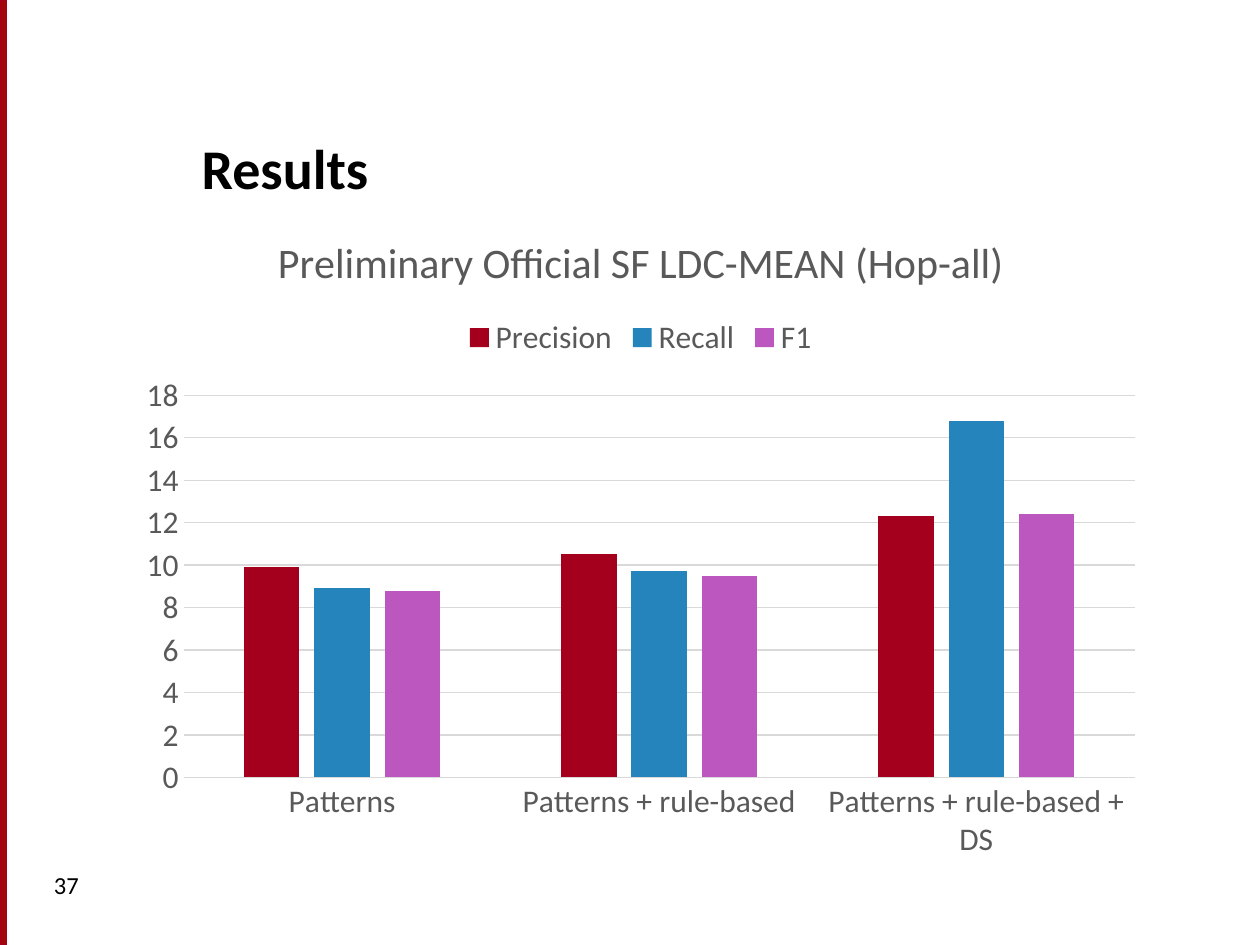
import pptx
import pptx.util
import pptx.chart.data
import pptx.dml.color
import pptx.enum.chart
import pptx.enum.shapes
import pptx.enum.text

Inches = pptx.util.Inches
Pt = pptx.util.Pt
RGBColor = pptx.dml.color.RGBColor

BLACK = RGBColor(0x00, 0x00, 0x00)
WHITE = RGBColor(0xFF, 0xFF, 0xFF)
GRAY = RGBColor(0x59, 0x59, 0x59)
RULE = RGBColor(0xD9, 0xD9, 0xD9)
EDGE = RGBColor(0xA4, 0x05, 0x08)
RED = RGBColor(0xA4, 0x00, 0x1D)
BLUE = RGBColor(0x25, 0x84, 0xBB)
PINK = RGBColor(0xBB, 0x57, 0xBE)


def style(font, size, color, bold=False):
    font.name = "Calibri"
    font.size = Pt(size)
    font.bold = bold
    font.color.rgb = color


def write(frame, text, size, bold=False):
    frame.word_wrap = True
    para = frame.paragraphs[0]
    para.alignment = pptx.enum.text.PP_ALIGN.LEFT
    run = para.add_run()
    run.text = text
    style(run.font, size, BLACK, bold)


deck = pptx.Presentation()
deck.slide_width = Inches(10)
deck.slide_height = Inches(7.5)
slide = deck.slides.add_slide(deck.slide_layouts[5])
slide.background.fill.solid()
slide.background.fill.fore_color.rgb = WHITE

bar = slide.shapes.add_shape(
    pptx.enum.shapes.MSO_SHAPE.RECTANGLE, 0, 0, Inches(0.05), Inches(7.5))
bar.shadow.inherit = False
bar.fill.solid()
bar.fill.fore_color.rgb = EDGE
bar.line.color.rgb = RED
bar.line.width = Pt(0.75)

title = slide.shapes.title
title.left, title.top = Inches(1.5), Inches(0.56)
title.width, title.height = Inches(8.17), Inches(1.08)
title.text_frame.vertical_anchor = pptx.enum.text.MSO_ANCHOR.BOTTOM
write(title.text_frame, "Results", 32, True)

number = slide.shapes.add_textbox(
    Inches(0.33), Inches(6.86), Inches(2.17), Inches(0.5))
write(number.text_frame, "37", 14)

data = pptx.chart.data.CategoryChartData()
data.categories = ["Patterns", "Patterns + rule-based",
                   "Patterns + rule-based + DS"]
data.add_series("Precision", [9.9, 10.5, 12.3])
data.add_series("Recall", [8.9, 9.7, 16.8])
data.add_series("F1", [8.8, 9.5, 12.4])
chart = slide.shapes.add_chart(
    pptx.enum.chart.XL_CHART_TYPE.COLUMN_CLUSTERED,
    Inches(1), Inches(1.64), Inches(8.17), Inches(5.28), data).chart
style(chart.font, 10, BLACK)

chart.has_title = True
head = chart.chart_title.text_frame.paragraphs[0].add_run()
head.text = "Preliminary Official SF LDC-MEAN (Hop-all)"
style(head.font, 24, GRAY)

chart.has_legend = True
chart.legend.position = pptx.enum.chart.XL_LEGEND_POSITION.TOP
chart.legend.include_in_layout = False
style(chart.legend.font, 18, GRAY)

plot = chart.plots[0]
plot.gap_width = 219
plot.overlap = -27
plot.vary_by_categories = False
for series, color in zip(plot.series, [RED, BLUE, PINK]):
    series.format.fill.solid()
    series.format.fill.fore_color.rgb = color

for axis in (chart.category_axis, chart.value_axis):
    axis.major_tick_mark = pptx.enum.chart.XL_TICK_MARK.NONE
    axis.minor_tick_mark = pptx.enum.chart.XL_TICK_MARK.NONE
    style(axis.tick_labels.font, 18, GRAY)

chart.value_axis.format.line.fill.background()
chart.value_axis.has_major_gridlines = True
for line in (chart.category_axis.format.line,
             chart.value_axis.major_gridlines.format.line):
    line.color.rgb = RULE
    line.width = Pt(0.75)

deck.save("out.pptx")
